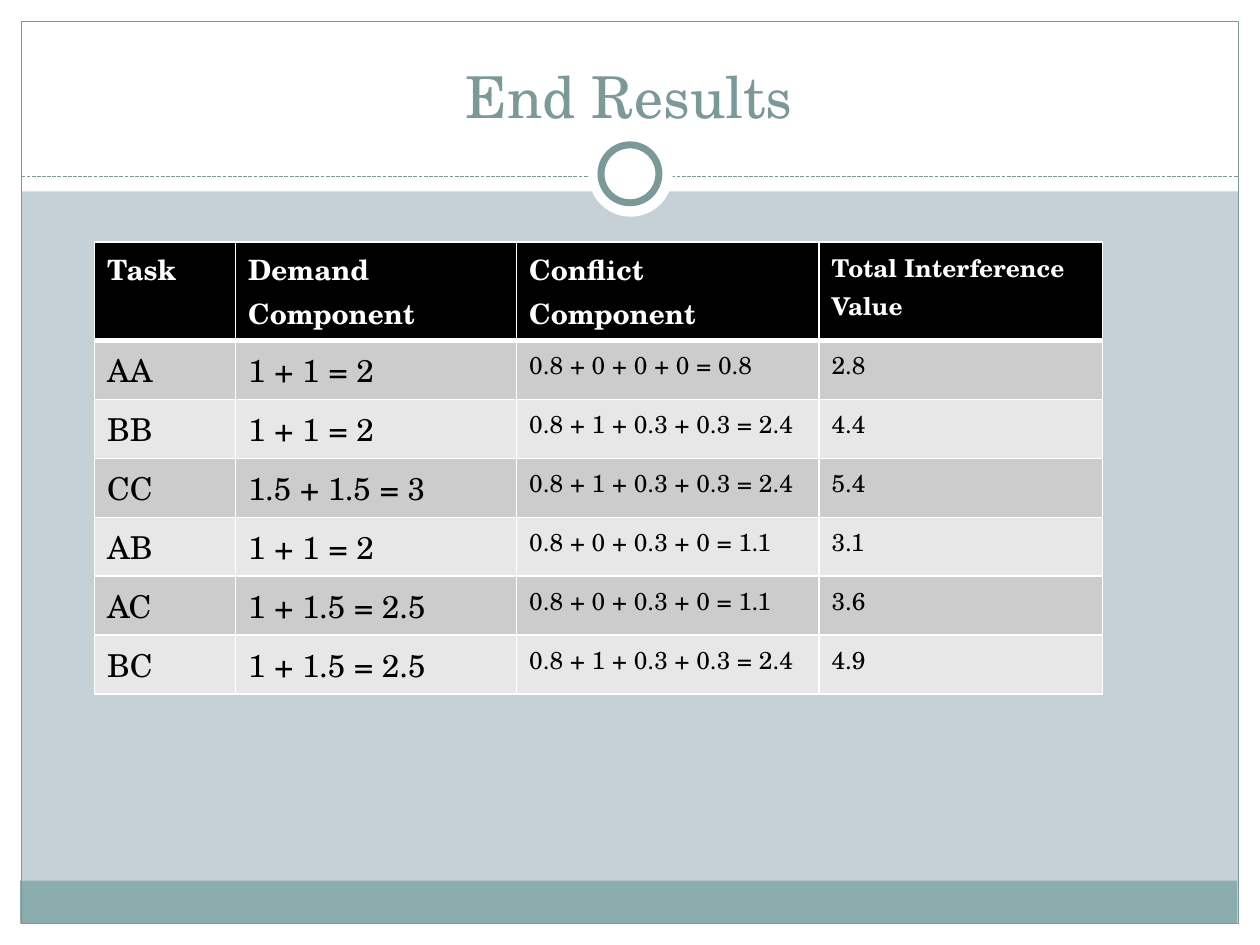
from dataclasses import dataclass
from typing import Optional

import lxml.etree
import pptx
import pptx.dml.color
import pptx.enum.dml
import pptx.enum.shapes
import pptx.enum.text
import pptx.oxml.ns
import pptx.util

Inches, Pt = pptx.util.Inches, pptx.util.Pt
Kind = pptx.enum.shapes.MSO_SHAPE
qn = pptx.oxml.ns.qn

FONT = "TeX Gyre Schola"
COLORS = {
    "back": "C5D1D7", "white": "FFFFFF", "black": "000000", "bar": "8CADAE",
    "teal": "7C999A", "odd": "CCCCCC", "even": "E7E7E7",
}


@dataclass
class Part:
    left: float
    top: float
    width: float
    height: float
    fill: Optional[str] = "white"
    line: float = 0
    kind: int = Kind.RECTANGLE


FRAME = [
    Part(0, 7.33, 10, 0.17),
    Part(0, 0, 10, 1.52),
    Part(0, 0, 0.17, 7.5),
    Part(9.83, 0, 0.17, 7.5),
    Part(0.16, 6.99, 9.66, 0.34, "bar"),
    Part(0.17, 0.17, 9.66, 7.16, None, 0.75),
]
RINGS = [
    Part(4.67, 1.05, 0.67, 0.67, kind=Kind.OVAL),
    Part(4.77, 1.15, 0.46, 0.46, line=4, kind=Kind.OVAL),
]

WIDTHS = [1.12, 2.23, 2.4, 2.25]
ROW = 0.41
HEAD_SIZES = [16, 16, 16, 14]
BODY_SIZES = [18, 18, 14, 14]
ROWS = [
    ["Task", "Demand Component", "Conflict Component", "Total Interference Value"],
    ["AA", "1 + 1 = 2", "0.8 + 0 + 0 + 0 = 0.8", "2.8"],
    ["BB", "1 + 1 = 2", "0.8 + 1 + 0.3 + 0.3 = 2.4", "4.4"],
    ["CC", "1.5 + 1.5 = 3", "0.8 + 1 + 0.3 + 0.3 = 2.4", "5.4"],
    ["AB", "1 + 1 = 2", "0.8 + 0 + 0.3 + 0 = 1.1", "3.1"],
    ["AC", "1 + 1.5 = 2.5", "0.8 + 0 + 0.3 + 0 = 1.1", "3.6"],
    ["BC", "1 + 1.5 = 2.5", "0.8 + 1 + 0.3 + 0.3 = 2.4", "4.9"],
]


def rgb(name: str) -> pptx.dml.color.RGBColor:
    return pptx.dml.color.RGBColor.from_string(COLORS[name])


def paint(fill, name: str) -> None:
    fill.solid()
    fill.fore_color.rgb = rgb(name)


def style(para, size: float, color: str, bold: bool = False) -> None:
    for run in para.runs:
        font = run.font
        font.name, font.size, font.bold = FONT, Pt(size), bold
        font.color.rgb = rgb(color)


def draw_part(slide, part: Part) -> None:
    shape = slide.shapes.add_shape(
        part.kind, Inches(part.left), Inches(part.top),
        Inches(part.width), Inches(part.height))
    shape.shadow.inherit = False
    if part.fill:
        paint(shape.fill, part.fill)
    else:
        shape.fill.background()
    if part.line:
        shape.line.width = Pt(part.line)
        shape.line.color.rgb = rgb("teal")
    else:
        shape.line.fill.background()


def draw_rule(slide) -> None:
    rule = slide.shapes.add_connector(
        pptx.enum.shapes.MSO_CONNECTOR.STRAIGHT,
        Inches(0.17), Inches(1.4), Inches(9.83), Inches(1.4))
    rule.line.width = Pt(0.75)
    rule.line.color.rgb = rgb("teal")
    rule.line.dash_style = pptx.enum.dml.MSO_LINE.SQUARE_DOT
    lxml.etree.SubElement(rule._element.spPr, qn("a:effectLst"))


def draw_title(slide) -> None:
    title = slide.shapes.title
    title.left, title.top = Inches(0.33), Inches(0.25)
    title.width, title.height = Inches(9.33), Inches(0.83)
    frame = title.text_frame
    frame.text = "End Results"
    frame.vertical_anchor = pptx.enum.text.MSO_ANCHOR.BOTTOM
    para = frame.paragraphs[0]
    para.alignment = pptx.enum.text.PP_ALIGN.CENTER
    style(para, 33, "teal")
    # Later shapes must not cover the title
    slide.shapes._spTree.append(title._element)


def edge(cell, base: float) -> None:
    """Give the cell white borders, the bottom one of its own weight."""
    props = cell._tc.get_or_add_tcPr()
    for spot, side in enumerate("LRTB"):
        width = base if side == "B" else 1
        line = lxml.etree.Element(qn(f"a:ln{side}"), w=str(Pt(width)))
        fill = lxml.etree.SubElement(line, qn("a:solidFill"))
        lxml.etree.SubElement(fill, qn("a:srgbClr"), val=COLORS["white"])
        props.insert(spot, line)


def draw_table(slide) -> None:
    table = slide.shapes.add_table(
        len(ROWS), len(WIDTHS), Inches(0.75), Inches(1.92),
        Inches(sum(WIDTHS)), Inches(ROW * len(ROWS))).table
    for col, width in zip(table.columns, WIDTHS):
        col.width = Inches(width)
    for r, texts in enumerate(ROWS):
        table.rows[r].height = Inches(ROW)
        head = r == 0
        back = "black" if head else "odd" if r % 2 else "even"
        sizes = HEAD_SIZES if head else BODY_SIZES
        for c, (text, size) in enumerate(zip(texts, sizes)):
            cell = table.cell(r, c)
            cell.text_frame.text = text
            style(cell.text_frame.paragraphs[0], size,
                  "white" if head else "black", head)
            paint(cell.fill, back)
            edge(cell, 3 if head else 1)


def main() -> None:
    deck = pptx.Presentation()
    deck.slide_width, deck.slide_height = Inches(10), Inches(7.5)
    slide = deck.slides.add_slide(deck.slide_layouts[5])
    paint(slide.background.fill, "back")
    for part in FRAME:
        draw_part(slide, part)
    draw_rule(slide)
    for part in RINGS:
        draw_part(slide, part)
    draw_title(slide)
    draw_table(slide)
    deck.save("out.pptx")


if __name__ == "__main__":
    main()
